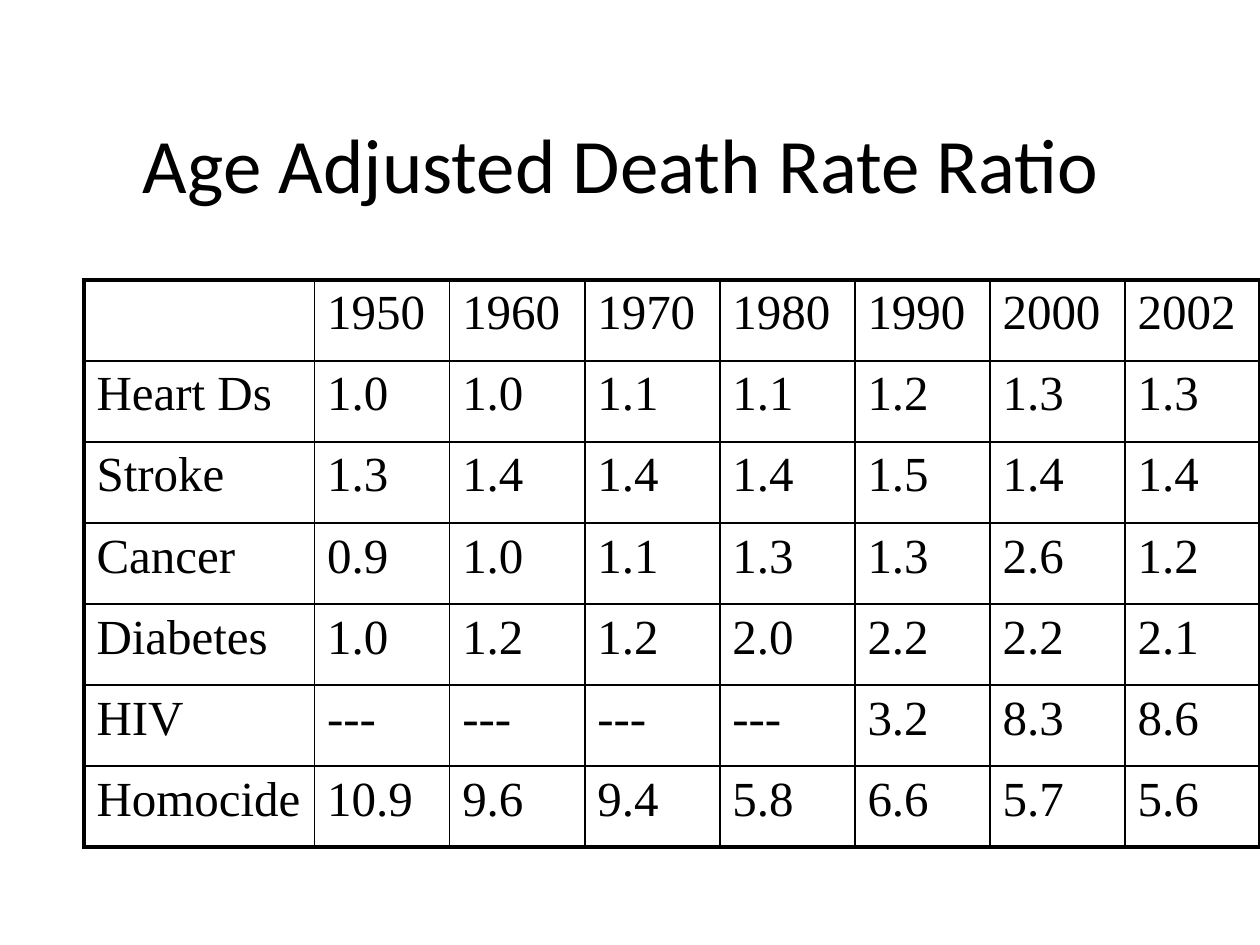
import pptx
import pptx.dml.color
import pptx.enum.text
import pptx.oxml.ns
import pptx.util
from lxml import etree

Pt = pptx.util.Pt
BLACK = "000000"


def format_font(font, name, size, color):
    font.name = name
    font.size = Pt(size)
    font.color.rgb = pptx.dml.color.RGBColor.from_string(color)


def add_border(cell, side, width, color):
    qn = pptx.oxml.ns.qn
    properties = cell._tc.get_or_add_tcPr()
    line = etree.SubElement(properties, qn(f"a:ln{side}"), w=str(Pt(width)))
    fill = etree.SubElement(line, qn("a:solidFill"))
    etree.SubElement(fill, qn("a:srgbClr"), val=color)


presentation = pptx.Presentation()
presentation.slide_width = Pt(720)
presentation.slide_height = Pt(540)
slide = presentation.slides.add_slide(presentation.slide_layouts[5])

# Title
title = slide.shapes.title
title.left, title.top, title.width, title.height = Pt(54), Pt(48), Pt(612), Pt(90)
title.text_frame.text = "Age Adjusted Death Rate Ratio "
title.text_frame.vertical_anchor = pptx.enum.text.MSO_ANCHOR.MIDDLE
paragraph = title.text_frame.paragraphs[0]
paragraph.alignment = pptx.enum.text.PP_ALIGN.CENTER
format_font(paragraph.runs[0].font, "Calibri", 44, BLACK)

# Ratios by cause of death and year
rows = [
    ["", "1950", "1960", "1970", "1980", "1990", "2000", "2002"],
    ["Heart Ds", "1.0", "1.0", "1.1", "1.1", "1.2", "1.3", "1.3"],
    ["Stroke", "1.3", "1.4", "1.4", "1.4", "1.5", "1.4", "1.4"],
    ["Cancer", "0.9", "1.0", "1.1", "1.3", "1.3", "2.6", "1.2"],
    ["Diabetes", "1.0", "1.2", "1.2", "2.0", "2.2", "2.2", "2.1"],
    ["HIV", "---", "---", "---", "---", "3.2", "8.3", "8.6"],
    ["Homocide", "10.9", "9.6", "9.4", "5.8", "6.6", "5.7", "5.6"],
]
last_row, last_column = len(rows) - 1, len(rows[0]) - 1
cause_width, year_width, row_height = 131.8, 77.2, 46.3

# Table grid
table = slide.shapes.add_table(
    len(rows), len(rows[0]), Pt(48), Pt(160),
    Pt(cause_width + last_column * year_width), Pt(len(rows) * row_height),
).table
table.first_row = False
table.horz_banding = False
for index, column in enumerate(table.columns):
    column.width = Pt(year_width if index else cause_width)
for row in table.rows:
    row.height = Pt(row_height)

# Cells: thick outer frame, thin inner lines
for row_index, values in enumerate(rows):
    for column_index, value in enumerate(values):
        cell = table.cell(row_index, column_index)
        outer_sides = {
            "L": column_index == 0,
            "R": column_index == last_column,
            "T": row_index == 0,
            "B": row_index == last_row,
        }
        for side, is_outer in outer_sides.items():
            add_border(cell, side, 2.25 if is_outer else 1, BLACK)
        cell.fill.background()
        cell.text_frame.text = value
        for run in cell.text_frame.paragraphs[0].runs:
            format_font(run.font, "Times New Roman", 28, BLACK)

presentation.save("out.pptx")
